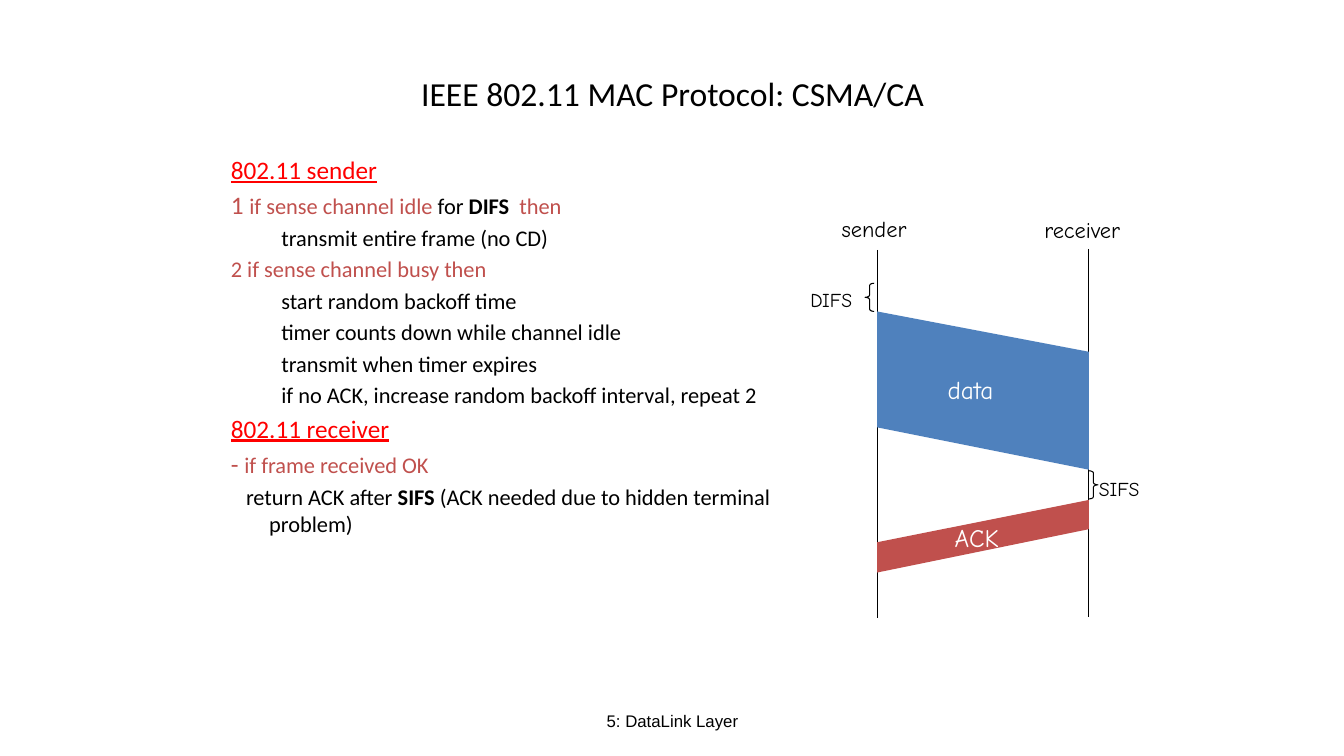
from lxml import etree
from pptx import Presentation, util as u
from pptx.dml.color import RGBColor
from pptx.enum import shapes, text
from pptx.oxml.ns import qn

PX = 9144
BLACK = RGBColor(0, 0, 0)
WHITE = RGBColor(255, 255, 255)
RED = RGBColor(255, 0, 0)
BRICK = RGBColor(0xC0, 0x50, 0x4D)
BLUE = RGBColor(0x4F, 0x81, 0xBD)
SENDER_X, RECEIVER_X = 870, 1080


def px(*values):
    return [u.Emu(v * PX) for v in values]


def add_run(p, words, size=16, font="Calibri", color=BLACK, bold=False, underline=False):
    r = p.add_run()
    r.text = words
    f = r.font
    f.size, f.name, f.bold, f.underline = u.Pt(size), font, bold, underline
    f.color.rgb = color


class Deck:
    label_font = "Comic Neue"
    line_width = u.Pt(0.75)

    def __init__(self, width, height):
        self.prs = Presentation()
        self.prs.slide_width, self.prs.slide_height = px(width, height)
        self.s = self.prs.slides.add_slide(self.prs.slide_layouts[1])

    def place(self, sp, box):
        sp.left, sp.top, sp.width, sp.height = px(*box)
        sp.text_frame.auto_size = text.MSO_AUTO_SIZE.NONE
        return sp.text_frame

    def title(self, box, words):
        tf = self.place(self.s.shapes.title, box)
        tf.vertical_anchor = text.MSO_ANCHOR.MIDDLE
        p = tf.paragraphs[0]
        p.alignment = text.PP_ALIGN.CENTER
        add_run(p, words, size=24)

    def body(self, box, items):
        tf = self.place(self.s.placeholders[1], box)
        for i, (level, margin, indent, runs) in enumerate(items):
            p = tf.add_paragraph() if i else tf.paragraphs[0]
            p.level = level
            pPr = p._p.get_or_add_pPr()
            pPr.set("marL", str(margin * PX))
            pPr.set("indent", str(indent * PX))
            etree.SubElement(pPr, qn("a:buNone"))
            for words, style in runs:
                add_run(p, words, **style)

    def footer(self, box, words):
        tf = self.s.shapes.add_textbox(*px(*box)).text_frame
        tf.word_wrap = True
        tf.vertical_anchor = text.MSO_ANCHOR.MIDDLE
        p = tf.paragraphs[0]
        p.alignment = text.PP_ALIGN.CENTER
        add_run(p, words, size=12, font="Arial")

    def label(self, box, words, size, color=BLACK):
        tf = self.s.shapes.add_textbox(*px(*box)).text_frame
        tf.word_wrap = False
        add_run(tf.paragraphs[0], words, size=size, font=self.label_font, color=color)

    def timeline(self, x, top, bottom):
        line = self.s.shapes.add_connector(
            shapes.MSO_CONNECTOR.STRAIGHT, *px(x, top, x, bottom))
        line.line.color.rgb = BLACK
        line.line.width = self.line_width
        etree.SubElement(line._element.spPr, qn("a:effectLst"))

    def brace(self, kind, box):
        sp = self.s.shapes.add_shape(kind, *px(*box))
        sp.shadow.inherit = False
        sp.adjustments[0] = 0.25
        sp.fill.background()
        sp.line.color.rgb = BLACK
        sp.line.width = self.line_width

    def band(self, points, color):
        fb = self.s.shapes.build_freeform(*points[0], scale=PX)
        fb.add_line_segments(points[1:], close=True)
        sp = fb.convert_to_shape()
        sp.shadow.inherit = False
        sp.fill.solid()
        sp.fill.fore_color.rgb = color
        sp.line.fill.background()


def heading(words):
    return 0, 38, -38, [(words, dict(size=18, color=RED, underline=True))]


def step(*runs):
    return 0, 38, -38, runs


def detail(words):
    return 1, 81, -31, [(words, {})]


def main():
    d = Deck(1333, 750)
    brick, bold = dict(color=BRICK), dict(bold=True)
    d.title((67, 30, 1200, 125), "IEEE 802.11 MAC Protocol: CSMA/CA")
    d.body((219, 148, 616, 542), [
        heading("802.11 sender"),
        step(("1 ", dict(size=18, color=BRICK)), ("if sense channel idle", brick),
             (" for ", {}), ("DIFS ", bold), (" then", brick)),
        detail("transmit entire frame (no CD)"),
        step(("2 if sense channel busy then", brick)),
        detail("start random backoff time"),
        detail("timer counts down while channel idle"),
        detail("transmit when timer expires"),
        detail("if no ACK, increase random backoff interval, repeat 2"),
        heading("802.11 receiver"),
        step(("- ", dict(size=18, color=BRICK)), ("if frame received OK", brick)),
        (0, 38, -23, [("return ACK after ", {}), ("SIFS ", bold),
                      ("(ACK needed due to hidden terminal problem)", {})]),
    ])
    d.footer((456, 695, 422, 40), "5: DataLink Layer")

    d.timeline(SENDER_X, 248, 613)
    d.timeline(RECEIVER_X, 247, 612)
    d.label((825, 209, 91, 37), "sender", 16)
    d.label((1026, 210, 107, 37), "receiver", 16)

    d.brace(shapes.MSO_SHAPE.LEFT_BRACE, (858, 281, 9, 28))
    d.label((794, 281, 70, 33), "DIFS", 14)
    d.band([(SENDER_X, 309), (RECEIVER_X, 349), (RECEIVER_X, 466), (SENDER_X, 424)], BLUE)
    d.label((930, 366, 72, 40), "data", 18, WHITE)

    d.label((1080, 468, 70, 33), "SIFS", 14)
    d.brace(shapes.MSO_SHAPE.RIGHT_BRACE, (1080, 467, 9, 28))
    d.band([(SENDER_X, 568), (RECEIVER_X, 525), (RECEIVER_X, 496), (SENDER_X, 538)], BRICK)
    d.label((937, 513, 69, 40), "ACK", 18, WHITE)
    d.prs.save("out.pptx")


if __name__ == "__main__":
    main()
